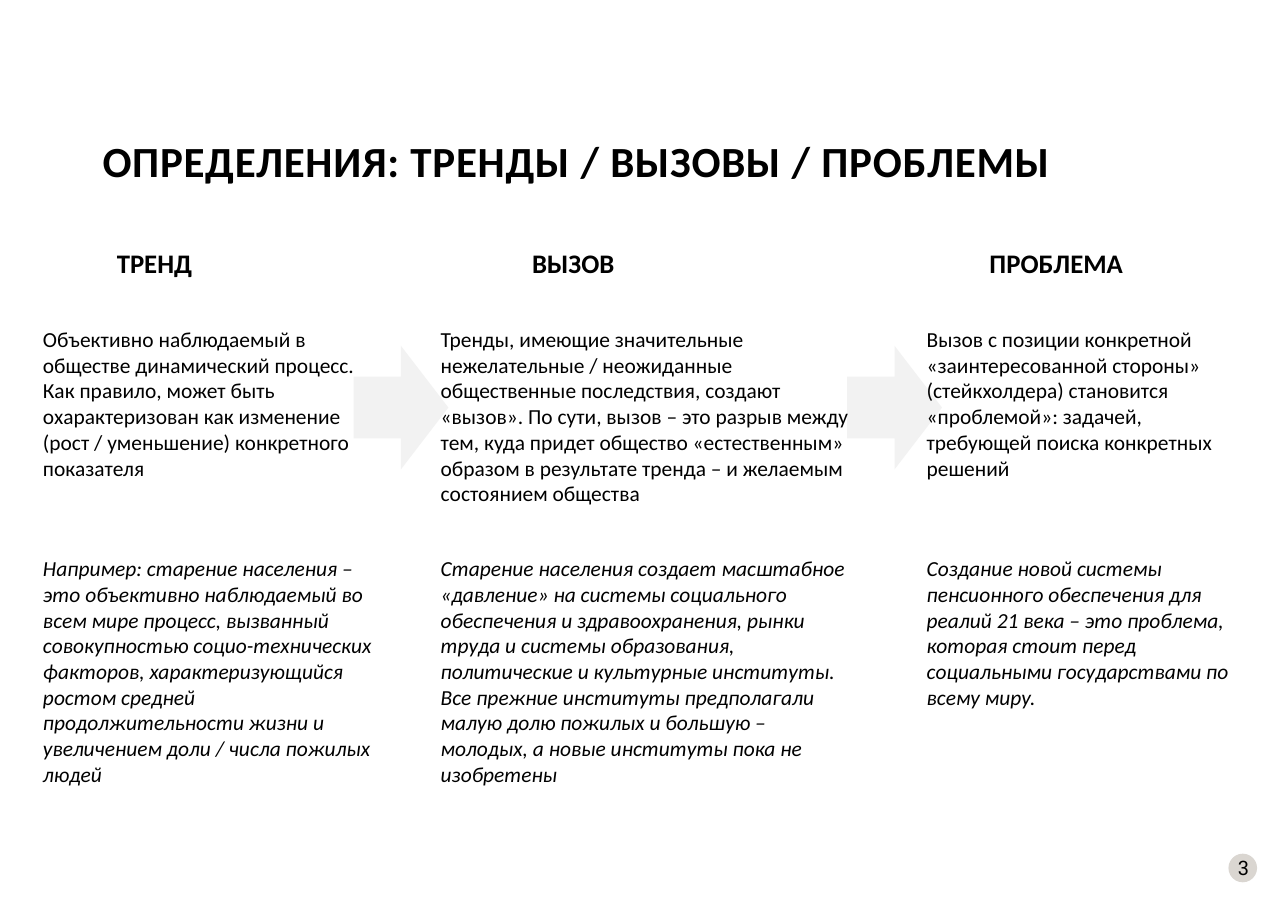
from pptx import Presentation
from pptx.dml.color import RGBColor
from pptx.enum.shapes import MSO_SHAPE
from pptx.enum.text import MSO_ANCHOR, MSO_AUTO_SIZE, PP_ALIGN
from pptx.util import Inches, Pt

HEADING = {"name": "Calibri", "size": Pt(17.5), "bold": True}
DEFINITION = {"name": "Calibri", "size": Pt(14)}
EXAMPLE = {"name": "Calibri", "size": Pt(14), "italic": True}
TITLE = {"name": "Calibri", "size": Pt(28.1), "bold": True}
PAGE_NUMBER = {"name": "Roboto", "size": Pt(13)}
MARGINS = {
    "margin_left": Inches(0.09), "margin_right": Inches(0.09),
    "margin_top": Inches(0.04), "margin_bottom": Inches(0.04),
}

# Heading, its left and width; column left; definition, its width and height;
# example, its width and height
COLUMNS = [
    ("ТРЕНД", 0.97, 0.87, 0.3,
     "Объективно наблюдаемый в обществе динамический процесс. Как правило, "
     "может быть охарактеризован как изменение (рост / уменьшение) "
     "конкретного показателя", 3.06, 1.51,
     "Например: старение населения – это объективно наблюдаемый во всем мире "
     "процесс, вызванный совокупностью социо-технических факторов, "
     "характеризующийся ростом средней продолжительности жизни и увеличением "
     "доли / числа пожилых людей", 3.28, 2.21),
    ("ВЫЗОВ", 4.74, 0.94, 3.91,
     "Тренды, имеющие значительные нежелательные / неожиданные общественные "
     "последствия, создают «вызов». По сути, вызов – это разрыв между тем, "
     "куда придет общество «естественным» образом в результате тренда – и "
     "желаемым состоянием общества", 3.96, 1.74,
     "Старение населения создает масштабное «давление» на системы социального "
     "обеспечения и здравоохранения, рынки труда и системы образования, "
     "политические и культурные институты. Все прежние институты предполагали "
     "малую долю пожилых и большую – молодых, а новые институты пока не "
     "изобретены", 3.94, 2.21),
    ("ПРОБЛЕМА", 8.89, 1.41, 8.32,
     "Вызов с позиции конкретной «заинтересованной стороны» (стейкхолдера) "
     "становится «проблемой»: задачей, требующей поиска конкретных решений",
     3.08, 1.51,
     "Создание новой системы пенсионного обеспечения для реалий 21 века – это "
     "проблема, которая стоит перед социальными государствами по всему миру.",
     3.08, 1.51),
]


def paint(color_format, hex_color):
    color_format.rgb = RGBColor.from_string(hex_color)


def write(frame, text, font_values):
    """Fill a text frame with one black run and return that run."""
    frame.word_wrap = True
    for attribute, value in MARGINS.items():
        setattr(frame, attribute, value)
    run = frame.paragraphs[0].add_run()
    run.text = text
    for attribute, value in font_values.items():
        setattr(run.font, attribute, value)
    paint(run.font.color, "000000")
    return run


presentation = Presentation()
presentation.slide_width = Inches(11.69)
presentation.slide_height = Inches(8.27)
slide = presentation.slides.add_slide(presentation.slide_layouts[5])

# Title
title = slide.shapes.title
title.left, title.top = Inches(0.84), Inches(0.85)
title.width, title.height = Inches(10.08), Inches(1.27)
title_run = write(title.text_frame, "ОПРЕДЕЛЕНИЯ: ТРЕНДЫ / ВЫЗОВЫ / ПРОБЛЕМЫ", TITLE)
title_run.font._element.set("spc", "50")
title.text_frame.auto_size = MSO_AUTO_SIZE.NONE
title.text_frame.vertical_anchor = MSO_ANCHOR.MIDDLE
title.text_frame.paragraphs[0].alignment = PP_ALIGN.LEFT
title.text_frame.paragraphs[0].line_spacing = 0.9

# Arrows between the columns and the disc behind the page number
for preset, left, top, width, height, fill in [
    (MSO_SHAPE.RIGHT_ARROW, 3.21, 3.14, 0.86, 1.12, "F2F2F2"),
    (MSO_SHAPE.RIGHT_ARROW, 7.69, 3.14, 0.86, 1.12, "F2F2F2"),
    (MSO_SHAPE.OVAL, 11.15, 7.75, 0.26, 0.26, "DAD6D1"),
]:
    backdrop = slide.shapes.add_shape(
        preset, Inches(left), Inches(top), Inches(width), Inches(height))
    backdrop.shadow.inherit = False
    backdrop.fill.solid()
    paint(backdrop.fill.fore_color, fill)
    backdrop.line.fill.background()

# Columns: heading, definition, example
for (heading, heading_left, heading_width, column_left,
     definition, definition_width, definition_height,
     example, example_width, example_height) in COLUMNS:
    for text, left, top, width, height, font_values in [
        (heading, heading_left, 2.2, heading_width, 0.38, HEADING),
        (definition, column_left, 2.92, definition_width, definition_height, DEFINITION),
        (example, column_left, 5, example_width, example_height, EXAMPLE),
    ]:
        passage = slide.shapes.add_textbox(
            Inches(left), Inches(top), Inches(width), Inches(height))
        write(passage.text_frame, text, font_values)
        passage.text_frame.auto_size = MSO_AUTO_SIZE.SHAPE_TO_FIT_TEXT

# Page number
page_number = slide.shapes.add_textbox(
    Inches(11.1), Inches(7.73), Inches(0.37), Inches(0.32))
write(page_number.text_frame, "3", PAGE_NUMBER)
page_number.text_frame.word_wrap = False
page_number.text_frame.paragraphs[0].alignment = PP_ALIGN.CENTER

presentation.save("out.pptx")
